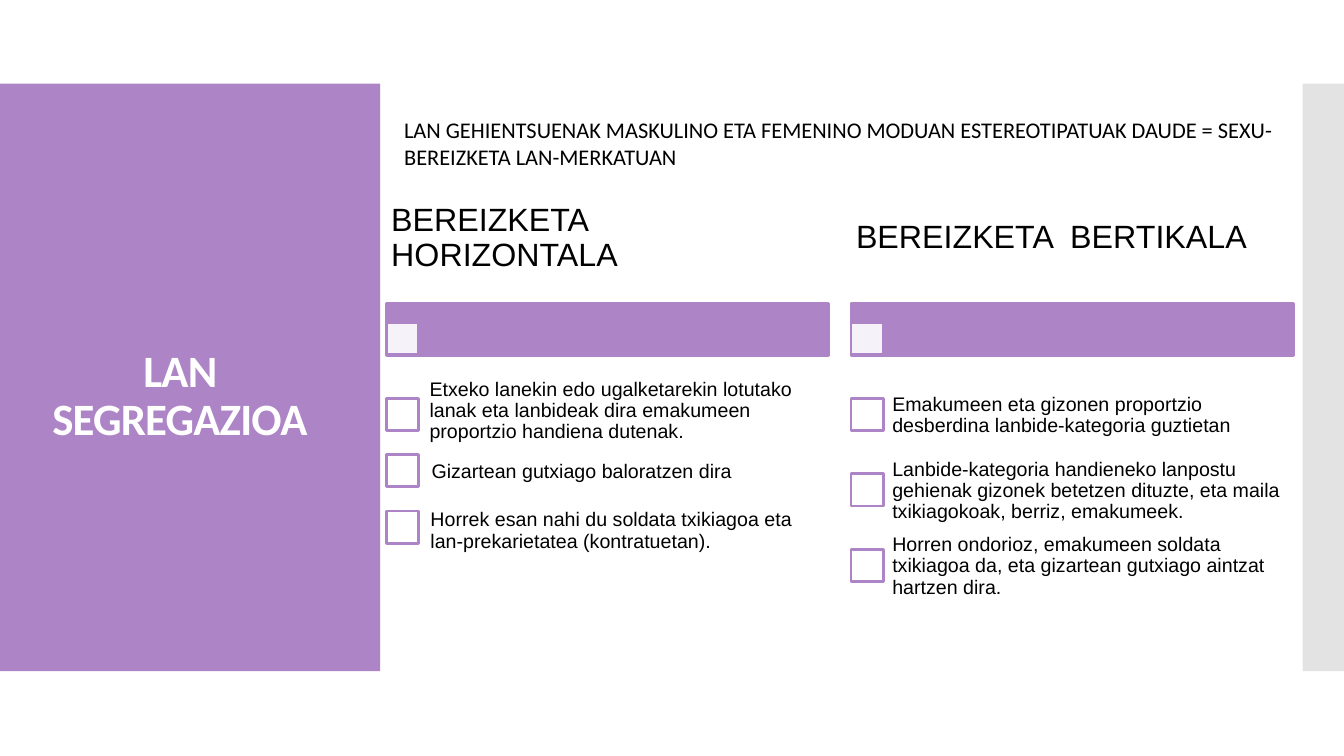
from dataclasses import dataclass

from lxml.etree import SubElement
from pptx import Presentation
from pptx.dml.color import RGBColor as Rgb
from pptx.enum.shapes import MSO_SHAPE as Shape
from pptx.enum.text import MSO_ANCHOR as Anchor, PP_ALIGN as Align
from pptx.oxml.ns import qn
from pptx.slide import Slide
from pptx.text.text import _Run as Run
from pptx.util import Inches, Pt


@dataclass(frozen=True)
class Theme:
    purple: Rgb = Rgb(0xAD, 0x84, 0xC6)
    gray: Rgb = Rgb(0xC8, 0xC8, 0xC8)
    white: Rgb = Rgb(0xFF, 0xFF, 0xFF)
    black: Rgb = Rgb(0, 0, 0)
    title_font: str = "Calibri"
    body_font: str = "Arial"
    title_size: int = 32
    heading_size: int = 23
    intro_size: int = 16
    item_size: int = 14


@dataclass(frozen=True)
class Area:
    left: float
    top: float
    width: float
    height: float

    def lengths(self) -> list[Inches]:
        return [Inches(v) for v in (self.left, self.top, self.width, self.height)]


@dataclass(frozen=True)
class TextStyle:
    font: str
    size: int
    color: Rgb
    bold: bool = False
    align: Align = Align.LEFT
    anchor: Anchor = Anchor.MIDDLE
    line_spacing: float = 0.9
    inset_x: float = 0.1
    inset_y: float = 0.05


@dataclass(frozen=True)
class Item:
    text: str
    left: float
    middle: float


@dataclass(frozen=True)
class Column:
    left: float
    heading: str
    box_pitch: float
    items: tuple[Item, ...]


THEME = Theme()
TITLE = TextStyle(THEME.title_font, THEME.title_size, THEME.white, True, Align.CENTER)
INTRO = TextStyle(THEME.title_font, THEME.intro_size, THEME.black,
                  anchor=Anchor.TOP, line_spacing=1.0)
HEADING = TextStyle(THEME.body_font, THEME.heading_size, THEME.black,
                    inset_x=0.05, inset_y=0.03)
ITEM = TextStyle(THEME.body_font, THEME.item_size, THEME.black,
                 inset_x=0.11, inset_y=0.11)

COLUMN_WIDTH = 4.39
BOX_SIZE = 0.32
FIRST_BOX_TOP = 3.95
ITEM_WIDTH, ITEM_HEIGHT = 4.08, 0.75

COLUMNS = (
    Column(3.83, "BEREIZKETA HORIZONTALA", 0.56, (
        Item("Etxeko lanekin edo ugalketarekin lotutako lanak eta lanbideak "
             "dira emakumeen proportzio handiena dutenak.", 4.15, 4.08),
        Item("Gizartean gutxiago baloratzen dira", 4.17, 4.68),
        Item("Horrek esan nahi du soldata txikiagoa eta lan-prekarietatea "
             "(kontratuetan).", 4.16, 5.27),
    )),
    Column(8.44, "BEREIZKETA  BERTIKALA", 0.75, (
        Item("Emakumeen eta gizonen proportzio desberdina lanbide-kategoria "
             "guztietan", 8.74, 4.12),
        Item("Lanbide-kategoria handieneko lanpostu gehienak gizonek betetzen "
             "dituzte, eta maila txikiagokoak, berriz, emakumeek.", 8.74, 4.87),
        Item("Horren ondorioz, emakumeen soldata txikiagoa da, eta gizartean "
             "gutxiago aintzat hartzen dira.", 8.74, 5.62),
    )),
)


def add_rectangle(page: Slide, area: Area, fill: Rgb,
                  outline: Rgb | None = None, opacity: int = 100) -> None:
    box = page.shapes.add_shape(Shape.RECTANGLE, *area.lengths())
    box.shadow.inherit = False
    box.fill.solid()
    box.fill.fore_color.rgb = fill
    if opacity < 100:
        color = box._element.spPr.find(qn("a:solidFill")).find(qn("a:srgbClr"))
        SubElement(color, qn("a:alpha")).set("val", str(opacity * 1000))
    if outline is None:
        box.line.fill.background()
    else:
        box.line.color.rgb = outline
        box.line.width = Pt(2)


def add_text(page: Slide, area: Area, text: str, style: TextStyle) -> Run:
    frame = page.shapes.add_textbox(*area.lengths()).text_frame
    frame.word_wrap = True
    frame.vertical_anchor = style.anchor
    frame.margin_left = frame.margin_right = Inches(style.inset_x)
    frame.margin_top = frame.margin_bottom = Inches(style.inset_y)
    frame.text = text
    para = frame.paragraphs[0]
    para.alignment = style.align
    para.line_spacing = style.line_spacing
    span = para.runs[0]
    span.font.name = style.font
    span.font.size = Pt(style.size)
    span.font.bold = style.bold
    span.font.color.rgb = style.color
    return span


def add_column(page: Slide, column: Column) -> None:
    left = column.left
    add_rectangle(page, Area(left, 3.01, COLUMN_WIDTH, 0.52), THEME.purple, THEME.purple)
    add_rectangle(page, Area(left, 3.2, BOX_SIZE, BOX_SIZE),
                  THEME.white, THEME.purple, opacity=90)
    add_text(page, Area(left, 1.9, COLUMN_WIDTH, 0.93), column.heading, HEADING)
    for row, item in enumerate(column.items):
        box_top = FIRST_BOX_TOP + row * column.box_pitch
        add_rectangle(page, Area(left, box_top, BOX_SIZE, BOX_SIZE),
                      THEME.white, THEME.purple)
        area = Area(item.left, item.middle - ITEM_HEIGHT / 2, ITEM_WIDTH, ITEM_HEIGHT)
        add_text(page, area, item.text, ITEM)


def main() -> None:
    deck = Presentation()
    deck.slide_width, deck.slide_height = Inches(13.33), Inches(7.5)
    page = deck.slides.add_slide(deck.slide_layouts[6])
    add_rectangle(page, Area(0, 0.83, 3.77, 5.83), THEME.purple)
    add_rectangle(page, Area(12.92, 0.83, 0.41, 5.83), THEME.gray, opacity=50)
    title = add_text(page, Area(0.22, 2.66, 3.13, 2.56), "LAN SEGREGAZIOA", TITLE)
    title._r.get_or_add_rPr().set("spc", "-60")
    add_text(page, Area(3.91, 1.1, 9.21, 0.63),
             "LAN GEHIENTSUENAK MASKULINO ETA FEMENINO MODUAN ESTEREOTIPATUAK "
             "DAUDE = SEXU-BEREIZKETA LAN-MERKATUAN", INTRO)
    for column in COLUMNS:
        add_column(page, column)
    deck.save("out.pptx")


if __name__ == "__main__":
    main()
